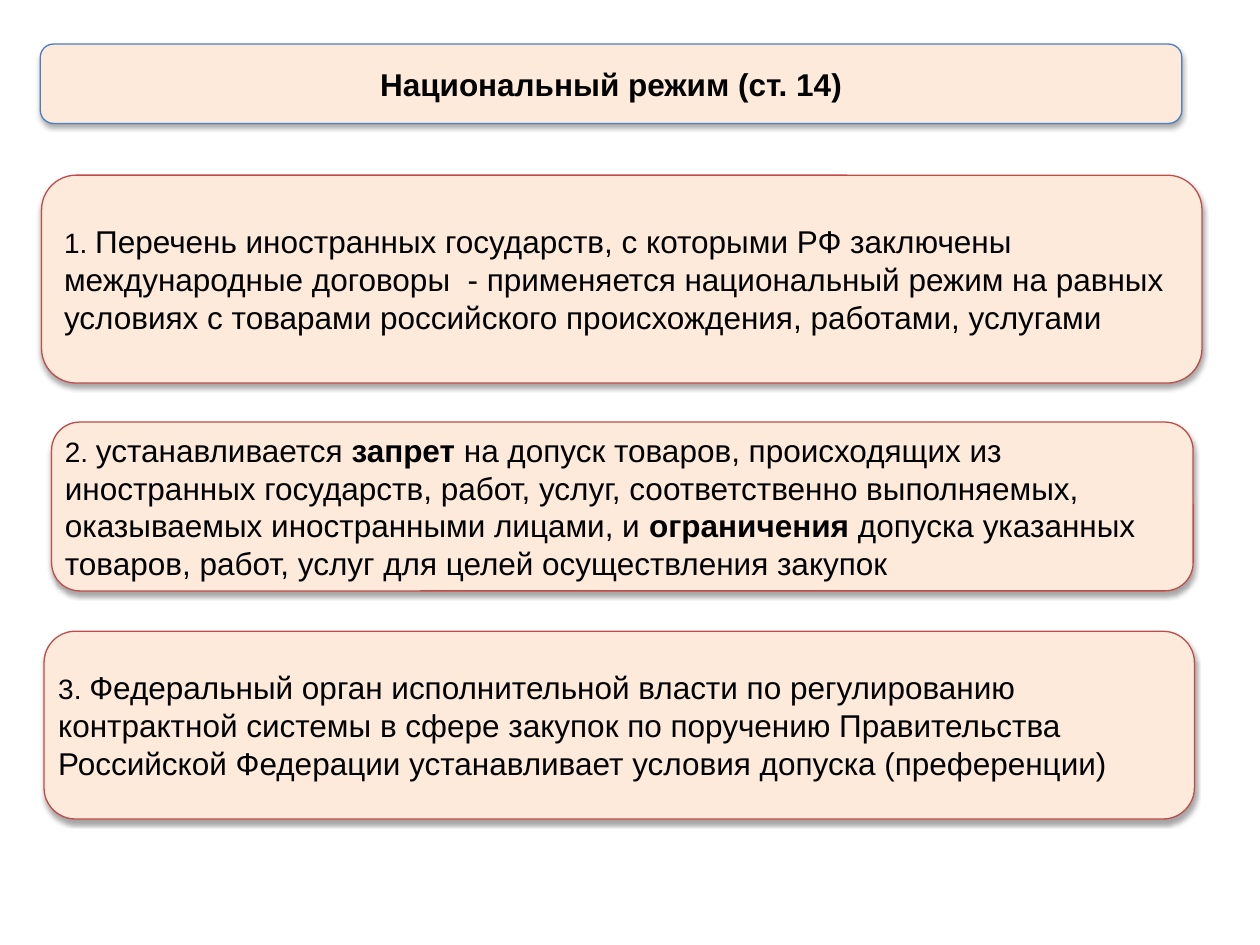
"""Builds a slide on the national regime: a title panel and three rule cards."""
from dataclasses import dataclass

from lxml import etree
from pptx import Presentation
from pptx import util as u
from pptx.dml import color
from pptx.enum import shapes, text
from pptx.oxml import ns


@dataclass(frozen=True)
class Theme:
    font: str = "Arial"
    ink: str = "000000"
    fill: str = "FDEADA"
    blue: str = "4B7EBC"
    red: str = "BF4C48"
    size: int = 18
    small: int = 16


THEME = Theme()
TITLE = (0.32, 0.35, 9.06, 0.63)
CARDS = [
    ((0.33, 1.39, 9.21, 1.65), 0.1, [
        ("Перечень иностранных государств, с которыми РФ заключены международные "
         "договоры  - применяется национальный режим на равных условиях с товарами "
         "российского происхождения, работами, услугами", False)]),
    ((0.41, 3.35, 9.06, 1.34), 0.04, [
        ("устанавливается ", False),
        ("запрет", True),
        (" на допуск товаров, происходящих из иностранных государств, работ, услуг, "
         "соответственно выполняемых, оказываемых иностранными лицами, и ", False),
        ("ограничения", True),
        (" допуска указанных товаров, работ, услуг для целей осуществления закупок",
         False)]),
    ((0.35, 5.01, 9.13, 1.49), 0.04, [
        ("Федеральный орган исполнительной власти по регулированию контрактной "
         "системы в сфере закупок по поручению Правительства Российской Федерации "
         "устанавливает условия допуска (преференции)", False)]),
]


def add_shade(shape):
    shape.shadow.inherit = False
    list_el = shape._element.spPr.find(ns.qn("a:effectLst"))
    shade = etree.SubElement(
        list_el, ns.qn("a:outerShdw"), blurRad=str(u.Pt(3.1)),
        dist=str(u.Pt(1.8)), dir="5400000", rotWithShape="0")
    tint = etree.SubElement(shade, ns.qn("a:srgbClr"), val=THEME.ink)
    etree.SubElement(tint, ns.qn("a:alpha"), val="35000")


def add_panel(slide, box, edge):
    panel = slide.shapes.add_shape(
        shapes.MSO_SHAPE.ROUNDED_RECTANGLE, *map(u.Inches, box))
    panel.fill.solid()
    panel.fill.fore_color.rgb = color.RGBColor.from_string(THEME.fill)
    panel.line.color.rgb = color.RGBColor.from_string(edge)
    panel.line.width = u.Pt(0.75)
    add_shade(panel)
    return panel


def set_frame(frame, side, rise):
    frame.word_wrap = True
    frame.auto_size = text.MSO_AUTO_SIZE.NONE
    frame.vertical_anchor = text.MSO_ANCHOR.MIDDLE
    frame.margin_left = frame.margin_right = u.Inches(side)
    frame.margin_top = frame.margin_bottom = u.Inches(rise)


def add_run(para, words, size, bold=False):
    run = para.add_run()
    run.text = words
    font = run.font
    font.name, font.size, font.bold = THEME.font, u.Pt(size), bold
    font.color.rgb = color.RGBColor.from_string(THEME.ink)


def add_title(slide, words):
    title = slide.shapes.title
    panel = add_panel(slide, TITLE, THEME.blue)
    title._element.addprevious(panel._element)
    title.left, title.top, title.width, title.height = map(u.Inches, TITLE)
    set_frame(title.text_frame, 0.1, 0.05)
    para = title.text_frame.paragraphs[0]
    para.alignment = text.PP_ALIGN.CENTER
    add_run(para, words, THEME.size, True)


def add_card(slide, count, box, side, parts):
    frame = add_panel(slide, box, THEME.red).text_frame
    set_frame(frame, side, 0.04)
    para = frame.paragraphs[0]
    para.alignment = text.PP_ALIGN.LEFT
    add_run(para, f"{count}. ", THEME.small)
    for words, bold in parts:
        add_run(para, words, THEME.size, bold)


def main():
    deck = Presentation()
    deck.slide_width, deck.slide_height = u.Inches(10), u.Inches(7.5)
    slide = deck.slides.add_slide(deck.slide_layouts[5])
    add_title(slide, "Национальный режим (ст. 14)")
    for count, card in enumerate(CARDS, 1):
        add_card(slide, count, *card)
    deck.save("out.pptx")


if __name__ == "__main__":
    main()
